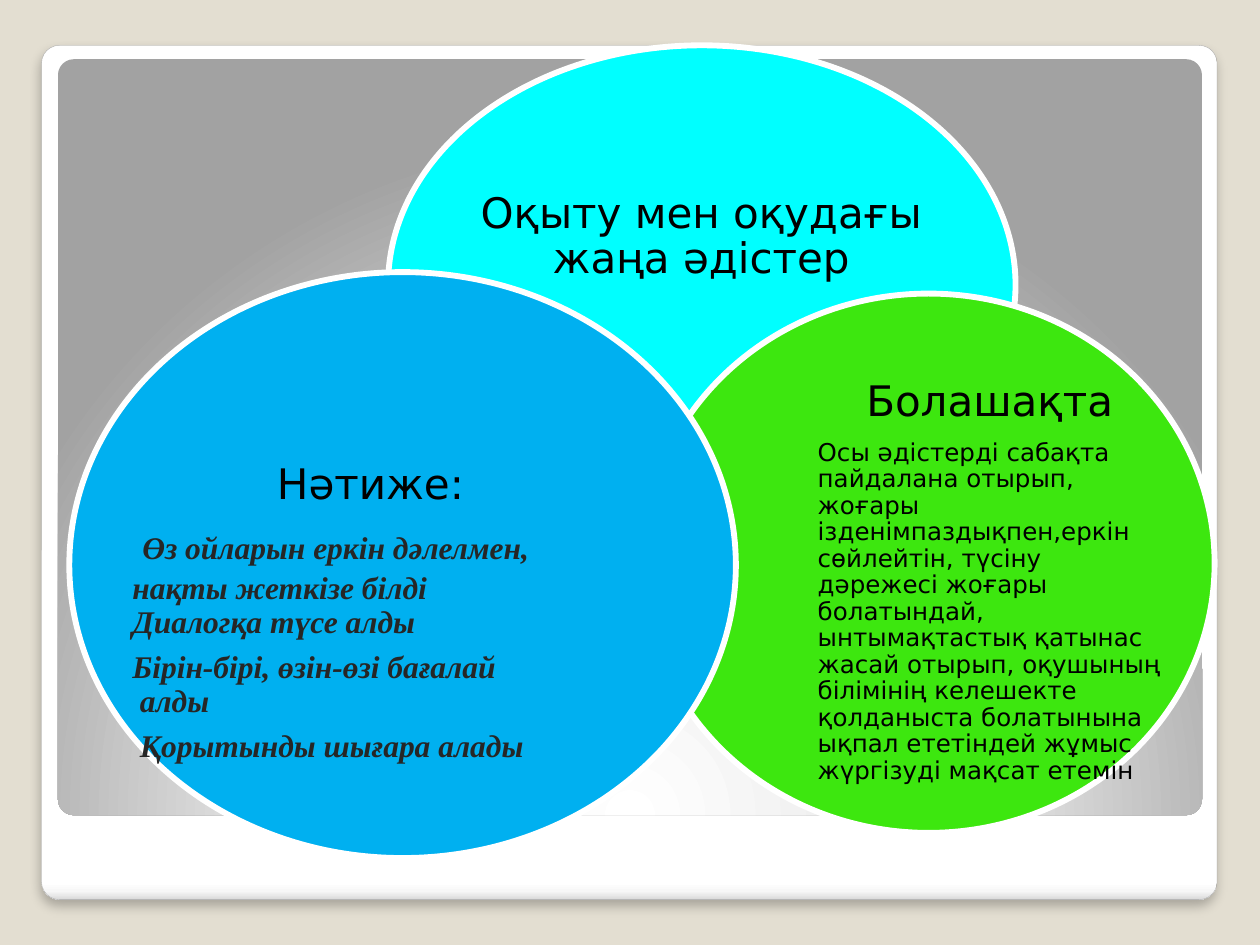
"""Build a slide of three overlapping ellipses on a framed panel."""
from dataclasses import dataclass
from lxml import etree
from pptx import Presentation
from pptx.dml.color import RGBColor
from pptx.enum.shapes import MSO_SHAPE
from pptx.enum.text import MSO_ANCHOR, PP_ALIGN
from pptx.oxml.ns import nsdecls
from pptx.util import Inches, Pt

ELLIPSE, ROUNDED = MSO_SHAPE.OVAL, MSO_SHAPE.ROUNDED_RECTANGLE
CENTER, LEFT = PP_ALIGN.CENTER, PP_ALIGN.LEFT
TOP, MIDDLE = MSO_ANCHOR.TOP, MSO_ANCHOR.MIDDLE
WIDTH, HEIGHT = Inches(10), Inches(7.5)
SANS, SERIF = "DejaVu Sans", "Times New Roman"
DOWNWARD = '<a:lin ang="5400000" scaled="0"/>'
FROM_BELOW = ('<a:path path="circle"><a:fillToRect l="50000" t="175000" '
              'r="50000" b="-75000"/></a:path>')
SHADOW = (f'<a:outerShdw {nsdecls("a")} blurRad="76200" dist="50800" dir="5400000" '
          'rotWithShape="0"><a:srgbClr val="000000"><a:alpha val="25000"/>'
          '</a:srgbClr></a:outerShdw>')


@dataclass
class Box:
    """Left, top, width and height in percent of the slide."""
    left: float
    top: float
    width: float
    height: float

    def emu(self) -> tuple[int, int, int, int]:
        """Return the box in slide units."""
        return (int(WIDTH * self.left / 100), int(HEIGHT * self.top / 100),
                int(WIDTH * self.width / 100), int(HEIGHT * self.height / 100))


@dataclass
class Para:
    """A paragraph; margin and indent are in inches, after in points."""
    text: str
    size: int = 24
    align: PP_ALIGN = CENTER
    after: float = 8.4
    spacing: float = 0.9
    margin: float = 0
    indent: float = 0
    font: str = SANS
    color: str = "000000"
    strong: bool = False


@dataclass
class Circle:
    """An ellipse and the text laid over it."""
    box: Box
    fill: str
    text_box: Box
    paras: list[Para]
    anchor: MSO_ANCHOR = MIDDLE


def note(text: str, **options) -> Para:
    """Return a bold italic paragraph of the result list."""
    return Para(text, 18, LEFT, font=SERIF, color="262626", strong=True,
                **{"after": 6.3, **options})


CIRCLES = [
    Circle(Box(30.8, 4.8, 49.8, 50.67), "00FFFF", Box(37.4, 13.73, 36.5, 22.8),
           [Para("Оқыту мен оқудағы жаңа әдістер")]),
    Circle(Box(51, 31.07, 45.4, 57.07), "3DE70F", Box(64.9, 45.87, 27.3, 31.47), [
        Para("Болашақта"),
        Para("Осы әдістерді сабақта пайдалана отырып, жоғары "
             "ізденімпаздықпен,еркін сөйлейтін, түсіну дәрежесі жоғары "
             "болатындай, ынтымақтастық қатынас жасай отырып, оқушының "
             "білімінің келешекте қолданыста болатынына ықпал ететіндей "
             "жұмыс жүргізуді мақсат етемін", 14, LEFT, after=4.9)]),
    Circle(Box(5.5, 28.8, 52.9, 62), "00B0F0", Box(10.5, 49.07, 31.8, 28), [
        Para("Нәтиже:", after=10, margin=0.6),
        note("Өз ойларын еркін дәлелмен, нақты жеткізе білді",
             after=0, spacing=1.05, indent=0.08),
        note("Диалогқа түсе алды"),
        note("Бірін-бірі, өзін-өзі бағалай алды", margin=0.06, indent=-0.06),
        note("Қорытынды шығара алады", margin=0.06)], TOP),
]


def rgb(value: str) -> RGBColor:
    """Turn a hex string into a colour."""
    return RGBColor.from_string(value)


def add_frame(slide, box: Box, stops: list[tuple[int, str]], direction: str):
    """Add a rounded rectangle with a gradient and no outline."""
    sp = slide.shapes.add_shape(ROUNDED, *box.emu())
    sp.adjustments[0] = 0.021
    sp.shadow.inherit = False
    sp.line.fill.background()
    marks = "".join(f'<a:gs pos="{pos * 1000}"><a:srgbClr val="{color}"/></a:gs>'
                    for pos, color in stops)
    sp._element.spPr.insert(2, etree.fromstring(
        f'<a:gradFill {nsdecls("a")} rotWithShape="1"><a:gsLst>{marks}</a:gsLst>'
        f'{direction}</a:gradFill>'))
    return sp


def add_text(slide, box: Box, paras: list[Para], anchor: MSO_ANCHOR) -> None:
    """Add a text box without insets."""
    tf = slide.shapes.add_textbox(*box.emu()).text_frame
    tf.word_wrap = True
    tf.vertical_anchor = anchor
    tf.margin_left = tf.margin_top = tf.margin_right = tf.margin_bottom = 0
    for i, para in enumerate(paras):
        p = tf.add_paragraph() if i else tf.paragraphs[0]
        p.alignment = para.align
        p.line_spacing = para.spacing
        p.space_after = Pt(para.after)
        pPr = p._p.get_or_add_pPr()
        pPr.set("marL", str(Inches(para.margin)))
        pPr.set("indent", str(Inches(para.indent)))
        r = p.add_run()
        r.text = para.text
        r.font.name = para.font
        r.font.size = Pt(para.size)
        r.font.bold = r.font.italic = para.strong
        r.font.color.rgb = rgb(para.color)


def add_circle(slide, circle: Circle) -> None:
    """Add a white-edged ellipse with its text."""
    sp = slide.shapes.add_shape(ELLIPSE, *circle.box.emu())
    sp.shadow.inherit = False
    sp.fill.solid()
    sp.fill.fore_color.rgb = rgb(circle.fill)
    sp.line.color.rgb = rgb("FFFFFF")
    sp.line.width = Pt(3.35)
    add_text(slide, circle.text_box, circle.paras, circle.anchor)


def main() -> None:
    """Build and save the slide."""
    prs = Presentation()
    prs.slide_width, prs.slide_height = WIDTH, HEIGHT
    slide = prs.slides.add_slide(prs.slide_layouts[6])
    slide.background.fill.solid()
    slide.background.fill.fore_color.rgb = rgb("E3DED1")
    card = add_frame(slide, Box(3.3, 4.8, 93.3, 90.4),
                     [(0, "FFFFFF"), (98, "FFFFFF"), (99, "F7F7F7"), (100, "DADADA")],
                     DOWNWARD)
    card.line.color.rgb = rgb("A4A4A4")
    card.line.width = Pt(0.16)
    card._element.spPr.find("{*}effectLst").append(etree.fromstring(SHADOW))
    add_frame(slide, Box(4.6, 6.27, 90.8, 80),
              [(0, "FFFFFF"), (55, "E1E1E1"), (100, "A2A2A2")], FROM_BELOW)
    for circle in CIRCLES:
        add_circle(slide, circle)
    prs.save("out.pptx")


if __name__ == "__main__":
    main()
